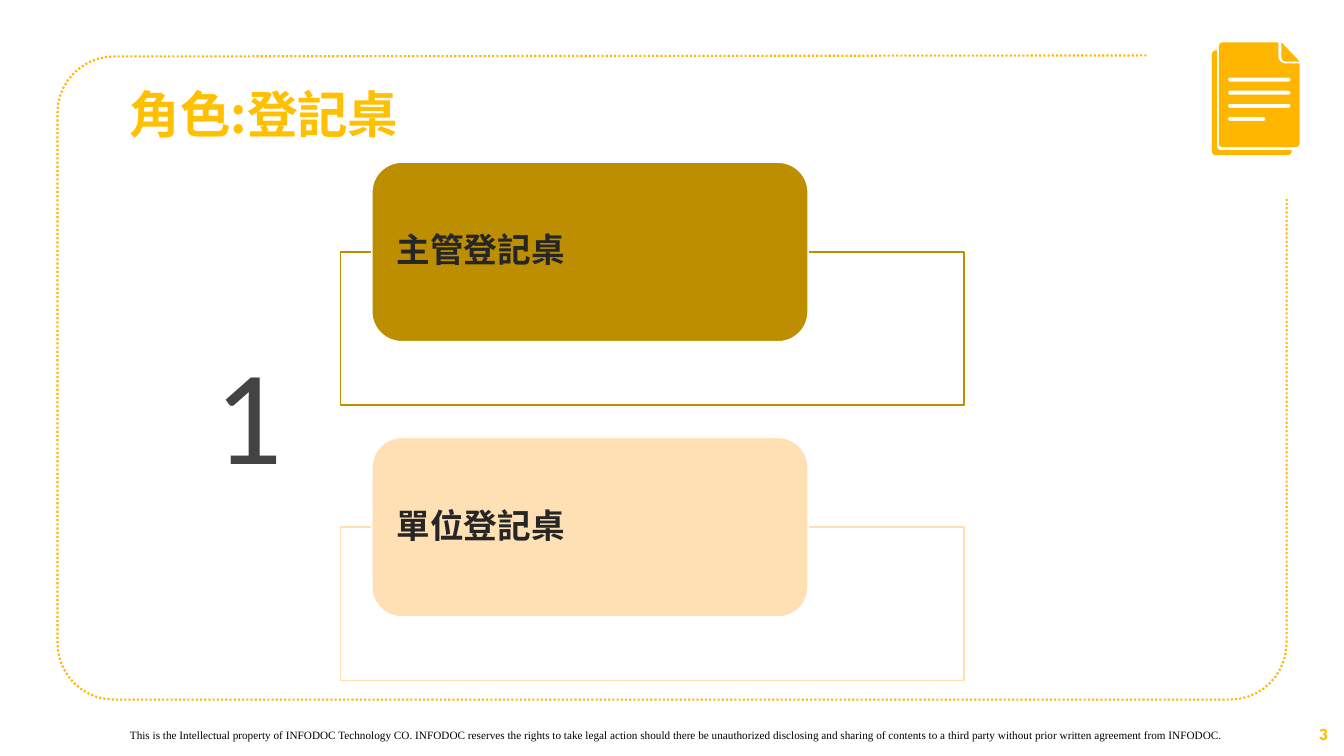
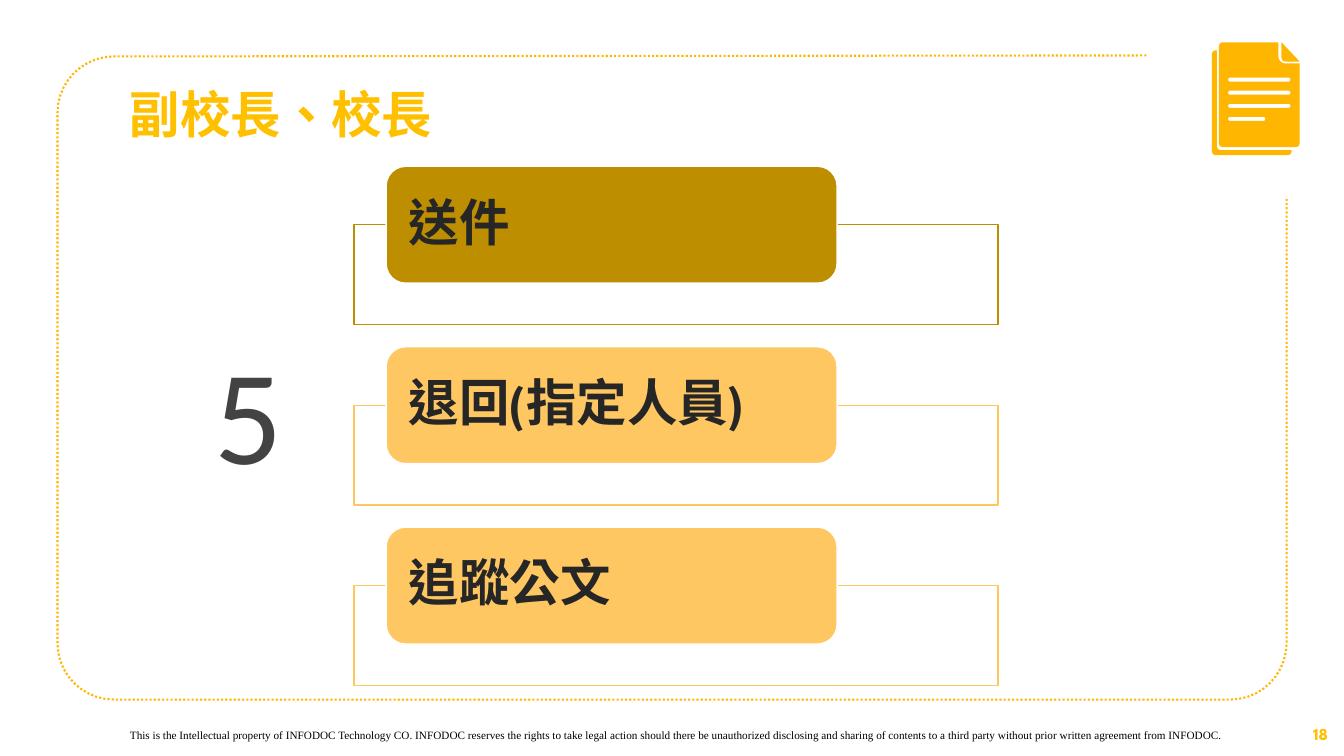
"""Build two role slides with stacked cards inside a dotted frame."""
from math import cos, radians, sin

from lxml import etree
from pptx import Presentation
from pptx.dml.color import RGBColor
from pptx.enum.dml import MSO_LINE
from pptx.enum.lang import MSO_LANGUAGE_ID
from pptx.enum.shapes import MSO_SHAPE
from pptx.enum.text import MSO_ANCHOR, PP_ALIGN
from pptx.oxml.ns import qn
from pptx.util import Inches, Pt

RECTANGLE = MSO_SHAPE.RECTANGLE
ROUNDED = MSO_SHAPE.ROUNDED_RECTANGLE
TOP, MIDDLE = MSO_ANCHOR.TOP, MSO_ANCHOR.MIDDLE
LEFT, CENTER, RIGHT = PP_ALIGN.LEFT, PP_ALIGN.CENTER, PP_ALIGN.RIGHT
DOTTED = MSO_LINE.ROUND_DOT
CHINESE = MSO_LANGUAGE_ID.TRADITIONAL_CHINESE

COLORS = {
    "white": "FFFFFF", "black": "000000", "frame": "FFB600", "title": "FFC000",
    "digit": "434343", "card text": "262626",
    "dark": "BD8E00", "pale": "FFE0B4", "light": "FFC762",
}
HAN_FONT = "Noto Sans CJK SC"
STYLES = {
    "title": (HAN_FONT, 36, "title", True),
    "footer": ("Times New Roman", 8, "black", False),
    "page number": ("League Spartan", 12, "title", True),
    "digit": ("Calibri", 96, "digit", False),
    "small card": ("League Spartan", 24, "card text", True),
    "large card": ("League Spartan", 36, "card text", True),
}
FOOTER = (
    "This is the Intellectual property of INFODOC Technology CO. INFODOC reserves "
    "the rights to take legal action should there be unauthorized disclosing and "
    "sharing of contents to a third party without prior written agreement from INFODOC."
)
SLIDES = [
    {
        "title": "角色:登記桌", "digit": "1", "number": "3", "style": "small card",
        "left": 3.38, "top": 2.5, "width": 6.18, "height": 1.52,
        "tab height": 1.78, "pitch": 2.73, "inset": 0.16,
        "cards": [("主管登記桌", "dark"), ("單位登記桌", "pale")],
    },
    {
        "title": "副校長、校長", "digit": "5", "number": "18", "style": "large card",
        "left": 3.51, "top": 2.23, "width": 6.39, "height": 0.99,
        "tab height": 1.16, "pitch": 1.79, "inset": 0.17,
        "cards": [("送件", "dark"), ("退回(指定人員)", "light"), ("追蹤公文", "light")],
    },
]


def arc(x, y, radius, start, end, steps=10):
    """Return points along a circular arc, with angles in degrees."""
    angles = [radians(start + (end - start) * i / steps) for i in range(steps + 1)]
    return [(x + radius * cos(angle), y + radius * sin(angle)) for angle in angles]


def pill(left, right, y, radius):
    """Return the outline of a bar with round ends."""
    return arc(left, y, radius, 90, 270) + arc(right, y, radius, -90, 90)


FRAME = (
    [(11.37, 0.55)] + arc(1.13, 1.12, 0.56, 270, 180) + arc(1.13, 6.38, 0.56, 180, 90)
    + arc(12.2, 6.38, 0.56, 90, 0) + [(12.76, 1.95)]
)
BACK_SHEET = (
    arc(12.06, 0.54, 0.04, 270, 180) + arc(12.06, 1.5, 0.04, 180, 90)
    + arc(12.77, 1.5, 0.04, 90, 0) + [(12.81, 1.49)]
    + arc(12.11, 1.45, 0.04, 90, 180) + [(12.07, 0.5)]
)
FRONT_SHEET = (
    arc(12.13, 0.46, 0.04, 270, 180) + arc(12.13, 1.42, 0.04, 180, 90)
    + arc(12.85, 1.42, 0.04, 90, 0) + [(12.89, 0.63)]
    + arc(12.75, 0.56, 0.07, 90, 180) + [(12.68, 0.42)]
)
TEXT_LINES = [
    pill(12.2, right, 0.79 + 0.13 * i, 0.02)
    for i, right in enumerate((12.78, 12.78, 12.78, 12.53))
]
FOLD = [(12.71, 0.42)] + arc(12.75, 0.57, 0.04, 180, 90) + [(12.89, 0.61)]
DOCUMENT_ICON = [[BACK_SHEET], [FRONT_SHEET] + TEXT_LINES, [FOLD]]


def color(name):
    return RGBColor.from_string(COLORS[name])


def paint(shape, fill=None, line=None, width=1):
    shape.shadow.inherit = False
    if fill:
        shape.fill.solid()
        shape.fill.fore_color.rgb = color(fill)
    else:
        shape.fill.background()
    if line:
        shape.line.color.rgb = color(line)
        shape.line.width = Pt(width)
    else:
        shape.line.fill.background()


def add_outline(page, contours, closed=True):
    points = [[(Inches(x), Inches(y)) for x, y in contour] for contour in contours]
    builder = page.shapes.build_freeform(*points[0][0])
    builder.add_line_segments(points[0][1:], close=closed)
    for contour in points[1:]:
        builder.move_to(*contour[0])
        builder.add_line_segments(contour[1:], close=closed)
    return builder.convert_to_shape()


def write(shape, text, style, align=LEFT, anchor=TOP, inset=(0.1, 0.05), spacing=None):
    font_name, size, ink, bold = STYLES[style]
    frame = shape.text_frame
    frame.word_wrap = True
    frame.vertical_anchor = anchor
    frame.margin_left = frame.margin_right = Inches(inset[0])
    frame.margin_top = frame.margin_bottom = Inches(inset[1])
    para = frame.paragraphs[0]
    para.alignment = align
    if spacing:
        para.line_spacing = spacing
    span = para.add_run()
    span.text = text
    font = span.font
    font.name, font.size, font.bold = font_name, Pt(size), bold
    font.color.rgb = color(ink)
    if not text.isascii():
        font.language_id = CHINESE
        properties = span.font._element
        etree.SubElement(properties, qn("a:ea"), typeface=HAN_FONT)


def add_text(page, bounds, text, style, **layout):
    box = page.shapes.add_textbox(*map(Inches, bounds))
    write(box, text, style, **layout)


def add_card(page, content, index):
    text, tint = content["cards"][index]
    left, width = content["left"], content["width"]
    top = content["top"] + index * content["pitch"]
    tab_height = content["tab height"]
    bounds = (left, top, width, content["height"])
    panel = page.shapes.add_shape(RECTANGLE, *map(Inches, bounds))
    paint(panel, "white", tint)
    shade = panel.fill._xPr.find(".//" + qn("a:srgbClr"))
    etree.SubElement(shade, qn("a:alpha"), val="90000")
    bounds = (left + 0.05 * width, top - tab_height / 2, 0.7 * width, tab_height)
    tab = page.shapes.add_shape(ROUNDED, *map(Inches, bounds))
    paint(tab, tint, "white")
    write(tab, text, content["style"], anchor=MIDDLE,
          inset=(content["inset"], 0), spacing=0.9)


def add_shared_parts(page, content):
    paint(frame := add_outline(page, [FRAME], closed=False), line="frame", width=1.5)
    frame.line.dash_style = DOTTED
    add_text(page, (1.19, 7.18, 11.11, 0.24), FOOTER, "footer")
    for contours in DOCUMENT_ICON:
        paint(add_outline(page, contours), "frame")
    add_text(page, (10.27, 7.08, 3, 0.4), content["number"], "page number",
             align=RIGHT, anchor=MIDDLE)
    add_text(page, (1.19, 0.84, 5.28, 0.74), content["title"], "title", spacing=0.9)
    add_text(page, (1.94, 3.06, 1.05, 2.03), content["digit"], "digit",
             align=CENTER, anchor=MIDDLE, inset=(0.1, 0.1))


def main():
    deck = Presentation()
    deck.slide_width, deck.slide_height = Inches(13.33), Inches(7.5)
    for content in SLIDES:
        page = deck.slides.add_slide(deck.slide_layouts[6])
        add_shared_parts(page, content)
        for index in range(len(content["cards"])):
            add_card(page, content, index)
    deck.save("out.pptx")


if __name__ == "__main__":
    main()
